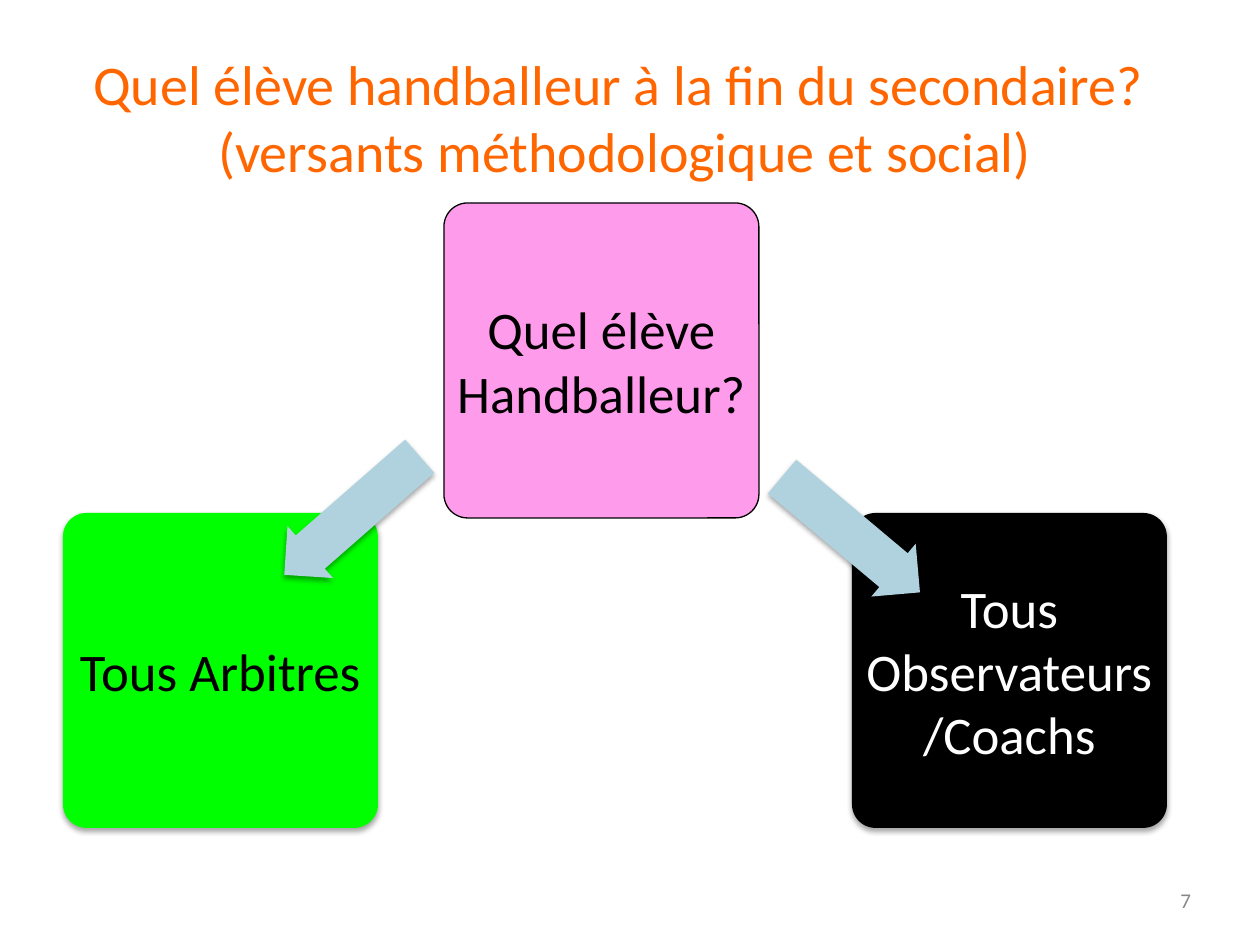
from dataclasses import dataclass

from lxml.etree import SubElement
from pptx import Presentation
from pptx.dml.color import RGBColor
from pptx.enum.shapes import MSO_SHAPE
from pptx.enum.text import MSO_ANCHOR, MSO_AUTO_SIZE, PP_ALIGN
from pptx.oxml.ns import qn
from pptx.util import Emu, Pt

COLORS = {
    "title": "FF6600", "green": "00FF00", "pink": "FF9BEB", "arrow": "B0D2DF",
    "black": "000000", "white": "FFFFFF", "grey": "888888",
}
SCALE = 914400 / 126  # EMU in one px
SIDE = 315  # side of a card
LONG, THICK = 180, 69  # arrow size
INSET = 6


@dataclass
class Card:
    text: str
    left: int
    top: int
    fill: str
    ink: str
    line: bool = False


@dataclass
class Arrow:
    left: int
    top: int
    turn: float


def px(n: int) -> Emu:
    return Emu(round(n * SCALE))


def rgb(name: str) -> RGBColor:
    return RGBColor.from_string(COLORS[name])


def apply(item, values: dict) -> None:
    for name, value in values.items():
        setattr(item, name, value)


def write(shape, text: str, size: float, ink: str,
          align=PP_ALIGN.CENTER, wrap: bool = True) -> None:
    frame = shape.text_frame
    frame.text = text
    sides = ("left", "top", "right", "bottom")
    apply(frame, {f"margin_{side}": px(INSET) for side in sides})
    apply(frame, {"auto_size": MSO_AUTO_SIZE.NONE, "word_wrap": wrap,
                  "vertical_anchor": MSO_ANCHOR.MIDDLE})
    for para in frame.paragraphs:
        para.alignment = align
        for run in para.runs:
            apply(run.font, {"name": "Calibri", "size": Pt(size)})
            run.font.color.rgb = rgb(ink)


def add_shade(shape) -> None:
    """Soft shadow straight below the shape."""
    effects = shape._element.spPr.find(qn("a:effectLst"))
    shade = SubElement(effects, qn("a:outerShdw"), blurRad=str(Pt(3)),
                       dist=str(Pt(1.8)), dir="5400000", rotWithShape="0")
    color = SubElement(shade, qn("a:srgbClr"), val=COLORS["black"])
    SubElement(color, qn("a:alpha"), val="35000")


def add_form(slide, kind, box: tuple[int, int, int, int], fill: str):
    shape = slide.shapes.add_shape(kind, *map(px, box))
    shape.shadow.inherit = False
    shape.fill.solid()
    shape.fill.fore_color.rgb = rgb(fill)
    shape.line.fill.background()
    return shape


def draw_card(slide, card: Card) -> None:
    box = (card.left, card.top, SIDE, SIDE)
    shape = add_form(slide, MSO_SHAPE.ROUNDED_RECTANGLE, box, card.fill)
    shape.adjustments[0] = 0.075
    if card.line:
        shape.line.color.rgb = rgb("black")
        shape.line.width = Pt(0.75)
    else:
        add_shade(shape)
    write(shape, card.text, 30.2, card.ink)


def draw_arrow(slide, arrow: Arrow) -> None:
    box = (arrow.left, arrow.top, LONG, THICK)
    shape = add_form(slide, MSO_SHAPE.RIGHT_ARROW, box, "arrow")
    shape.adjustments[0] = 0.64
    shape.rotation = arrow.turn
    add_shade(shape)


# Cards and arrows, from back to front
PARTS = [
    Card("Tous Arbitres", 63, 513, "green", "black"),
    Arrow(262, 481, 138.8),
    Card("Tous Observateurs/Coachs", 852, 513, "black", "white"),
    Card("Quel élève Handballeur?", 444, 203, "pink", "black", line=True),
    Arrow(761, 500, 40),
]


def main() -> None:
    deck = Presentation()
    apply(deck, {"slide_width": px(1260), "slide_height": px(945)})
    slide = deck.slides.add_slide(deck.slide_layouts[5])

    # Title
    title = slide.shapes.title
    apply(title, {"left": px(58), "top": px(38),
                  "width": px(1134), "height": px(158)})
    write(title, "Quel élève handballeur à la fin du secondaire? \v"
          "(versants méthodologique et social)", 32, "title")

    # Diagram
    for part in PARTS:
        draw = draw_card if isinstance(part, Card) else draw_arrow
        draw(slide, part)

    # Page number
    page = slide.shapes.add_textbox(*map(px, (1162, 882, 35, 37)))
    write(page, "7", 12, "grey", PP_ALIGN.RIGHT, wrap=False)

    deck.save("out.pptx")


if __name__ == "__main__":
    main()
